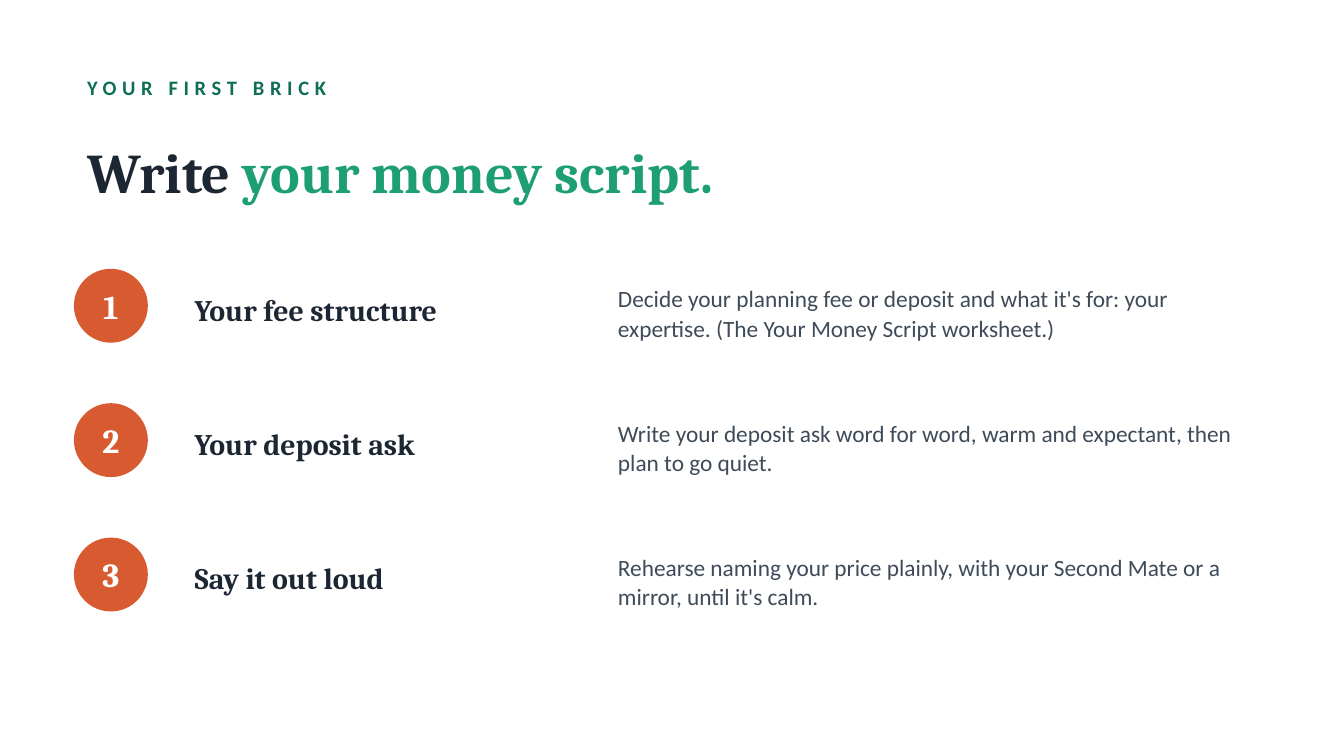
from dataclasses import dataclass

from pptx import Presentation
from pptx.dml.color import RGBColor
from pptx.enum.shapes import MSO_SHAPE
from pptx.enum.text import MSO_ANCHOR, MSO_AUTO_SIZE, PP_ALIGN
from pptx.util import Emu, Pt

OVAL = MSO_SHAPE.OVAL
MIDDLE = MSO_ANCHOR.MIDDLE
NO_AUTOFIT = MSO_AUTO_SIZE.NONE
LEFT, CENTER = PP_ALIGN.LEFT, PP_ALIGN.CENTER

EMU_PER_PX = 4572  # 200 px to the inch
SLIDE_WIDTH, SLIDE_HEIGHT = 2000, 1125
MARGIN = 110
CONTENT_WIDTH = 1780
FIRST_STEP_TOP, STEP_PITCH = 400, 200
BADGE_SIZE = 110
LABEL_RISE = 10  # labels start this far above their badge

COLORS = {
    "ink": "1C2733",
    "body": "3F4B59",
    "dark_green": "0F6E56",
    "green": "1D9E75",
    "orange": "D85A30",
    "white": "FFFFFF",
}


@dataclass(frozen=True)
class Box:
    left: int
    top: int
    width: int
    height: int

    def emu(self) -> list[Emu]:
        return [Emu(value * EMU_PER_PX)
                for value in (self.left, self.top, self.width, self.height)]


@dataclass(frozen=True)
class Style:
    font: str
    size: float
    color: str
    bold: bool = True
    alignment: PP_ALIGN = LEFT
    line_spacing: float = 1.0


@dataclass(frozen=True)
class Step:
    heading: str
    description: str


EYEBROW = Style("Calibri", 11, "dark_green")
TITLE = Style("Cambria", 30, "ink")
BADGE = Style("Cambria", 18, "white", alignment=CENTER)
HEADING = Style("Cambria", 16, "ink")
DESCRIPTION = Style("Calibri", 12.5, "body", bold=False, line_spacing=1.05)

STEPS = [
    Step("Your fee structure",
         "Decide your planning fee or deposit and what it's for: your expertise. "
         "(The Your Money Script worksheet.)"),
    Step("Your deposit ask",
         "Write your deposit ask word for word, warm and expectant, then plan to go quiet."),
    Step("Say it out loud",
         "Rehearse naming your price plainly, with your Second Mate or a mirror, "
         "until it's calm."),
]


def rgb(name: str) -> RGBColor:
    return RGBColor.from_string(COLORS[name])


def write(shape, text: str, style: Style, wrap: bool = True):
    """Fill the shape with one styled paragraph and return that paragraph."""
    frame = shape.text_frame
    frame.word_wrap = wrap
    frame.auto_size = NO_AUTOFIT
    frame.vertical_anchor = MIDDLE
    paragraph = frame.paragraphs[0]
    paragraph.text = text
    paragraph.alignment = style.alignment
    paragraph.line_spacing = style.line_spacing
    font = paragraph.font
    font.name = style.font
    font.size = Pt(style.size)
    font.bold = style.bold
    font.color.rgb = rgb(style.color)
    return paragraph


def add_text(slide, box: Box, text: str, style: Style):
    return write(slide.shapes.add_textbox(*box.emu()), text, style)


def add_title(slide) -> None:
    title = slide.shapes.title
    title.left, title.top, title.width, title.height = Box(
        MARGIN, 170, CONTENT_WIDTH, 170).emu()
    paragraph = write(title, "Write ", TITLE)
    accent = paragraph.add_run()
    accent.text = "your money script."
    accent.font.color.rgb = rgb("green")


def add_badge(slide, top: int, number: int) -> None:
    box = Box(MARGIN, top, BADGE_SIZE, BADGE_SIZE)
    badge = slide.shapes.add_shape(OVAL, *box.emu())
    badge.shadow.inherit = False
    badge.fill.solid()
    badge.fill.fore_color.rgb = rgb("orange")
    badge.line.fill.background()
    write(badge, str(number), BADGE, wrap=False)


def add_step(slide, number: int, step: Step) -> None:
    top = FIRST_STEP_TOP + (number - 1) * STEP_PITCH
    add_badge(slide, top, number)
    add_text(slide, Box(270, top - LABEL_RISE, 600, 140), step.heading, HEADING)
    add_text(slide, Box(900, top - LABEL_RISE, 1000, 150), step.description, DESCRIPTION)


def main() -> None:
    presentation = Presentation()
    presentation.slide_width = Emu(SLIDE_WIDTH * EMU_PER_PX)
    presentation.slide_height = Emu(SLIDE_HEIGHT * EMU_PER_PX)
    slide = presentation.slides.add_slide(presentation.slide_layouts.get_by_name("Title Only"))

    eyebrow = add_text(slide, Box(MARGIN, 100, CONTENT_WIDTH, 60), "YOUR FIRST BRICK", EYEBROW)
    eyebrow._p.get_or_add_pPr().get_or_add_defRPr().set("spc", "300")
    add_title(slide)
    for number, step in enumerate(STEPS, start=1):
        add_step(slide, number, step)

    presentation.save("out.pptx")


if __name__ == "__main__":
    main()
